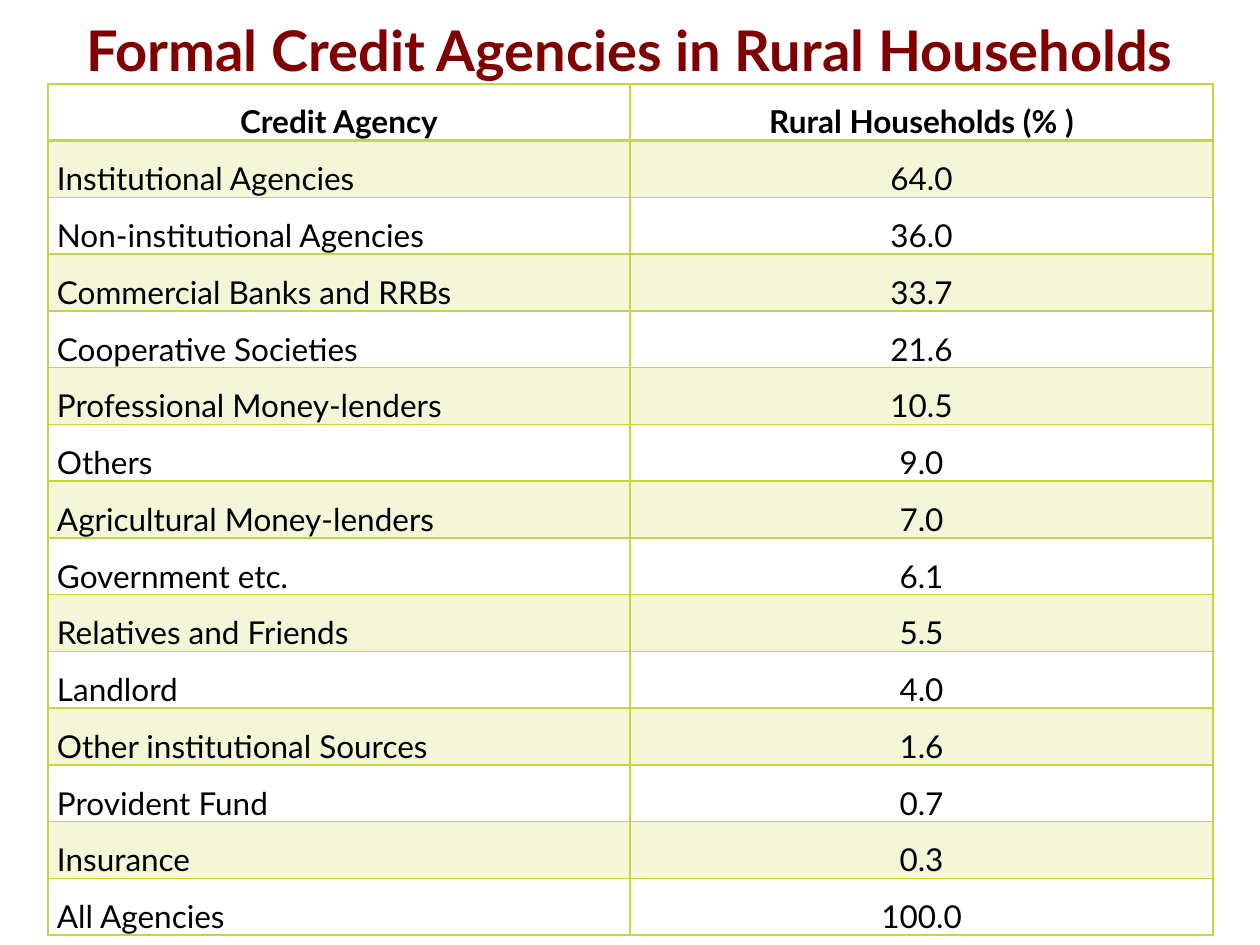
from lxml import etree
from pptx import Presentation
from pptx.dml.color import RGBColor
from pptx.enum.text import MSO_ANCHOR, MSO_AUTO_SIZE, PP_ALIGN
from pptx.oxml.ns import qn
from pptx.util import Emu, Pt

PX = 914400 // 126
FONT = "Lato"
MAROON = RGBColor(0x80, 0x00, 0x00)
BLACK = RGBColor(0x00, 0x00, 0x00)
LIME = RGBColor(0xC4, 0xD7, 0x3F)
BAND_ALPHA = 20000  # thousandths of a percent

CENTER, JUSTIFY = PP_ALIGN.CENTER, PP_ALIGN.JUSTIFY
TOP, MIDDLE = MSO_ANCHOR.TOP, MSO_ANCHOR.MIDDLE
NO_AUTOFIT = MSO_AUTO_SIZE.NONE

TITLE = "Formal Credit Agencies in Rural Households"
HEADER = ("Credit Agency", "Rural Households (% )")
AGENCIES = [
    ("Institutional Agencies", "64.0"),
    ("Non-institutional Agencies", "36.0"),
    ("Commercial Banks and RRBs", "33.7"),
    ("Cooperative Societies", "21.6"),
    ("Professional Money-lenders", "10.5"),
    ("Others", "9.0"),
    ("Agricultural Money-lenders", "7.0"),
    ("Government etc.", "6.1"),
    ("Relatives and Friends", "5.5"),
    ("Landlord", "4.0"),
    ("Other institutional Sources", "1.6"),
    ("Provident Fund", "0.7"),
    ("Insurance", "0.3"),
    ("All Agencies", "100.0"),
]


def px(length):
    return Emu(length * PX)


def style_paragraph(paragraph, size, color, bold, align):
    paragraph.alignment = align
    font = paragraph.font
    font.name, font.size, font.bold = FONT, Pt(size), bold
    font.color.rgb = color


def add_title(slide):
    title = slide.shapes.title
    title.left, title.top, title.width, title.height = map(px, (0, 9, 1260, 80))
    frame = title.text_frame
    frame.text = TITLE
    frame.word_wrap = True
    frame.auto_size = NO_AUTOFIT
    frame.vertical_anchor = TOP
    style_paragraph(frame.paragraphs[0], 32, MAROON, True, CENTER)


def set_borders(cell, top=1, bottom=1):
    """Draw the four cell edges; widths are in points."""
    properties = cell._tc.get_or_add_tcPr()
    edges = (("lnL", 1), ("lnR", 1), ("lnT", top), ("lnB", bottom))
    for position, (edge, width) in enumerate(edges):
        line = etree.Element(qn(f"a:{edge}"), w=str(Pt(width)))
        fill = etree.SubElement(line, qn("a:solidFill"))
        etree.SubElement(fill, qn("a:srgbClr"), val=str(LIME))
        properties.insert(position, line)


def fill_band(cell):
    cell.fill.solid()
    cell.fill.fore_color.rgb = LIME
    color = cell._tc.tcPr.find(f"{qn('a:solidFill')}/{qn('a:srgbClr')}")
    etree.SubElement(color, qn("a:alpha"), val=str(BAND_ALPHA))


def format_cell(cell, text, row, column):
    is_header = row == 0
    cell.text = text
    cell.margin_left = cell.margin_right = px(9)
    cell.margin_top = cell.margin_bottom = 0
    cell.vertical_anchor = TOP if is_header else MIDDLE
    paragraph = cell.text_frame.paragraphs[0]
    paragraph.line_spacing = 1.5
    align = CENTER if is_header or column == 1 else JUSTIFY
    style_paragraph(paragraph, 18, BLACK, is_header, align)
    if row % 2:
        fill_band(cell)
    else:
        cell.fill.background()
    # The rule under the header is double width
    set_borders(cell, top=2 if row == 1 else 1, bottom=2 if is_header else 1)


def add_agency_table(slide):
    rows = [HEADER, *AGENCIES]
    frame = slide.shapes.add_table(len(rows), len(HEADER), px(48), px(84), px(1165), px(851))
    table = frame.table
    table.first_row = table.horz_banding = False
    for column, width in zip(table.columns, (582, 583)):
        column.width = px(width)
    for row, texts in enumerate(rows):
        for column, text in enumerate(texts):
            format_cell(table.cell(row, column), text, row, column)


def main():
    presentation = Presentation()
    presentation.slide_width, presentation.slide_height = px(1260), px(945)
    title_only = presentation.slide_layouts[5]
    slide = presentation.slides.add_slide(title_only)
    add_title(slide)
    add_agency_table(slide)
    presentation.save("out.pptx")


if __name__ == "__main__":
    main()
